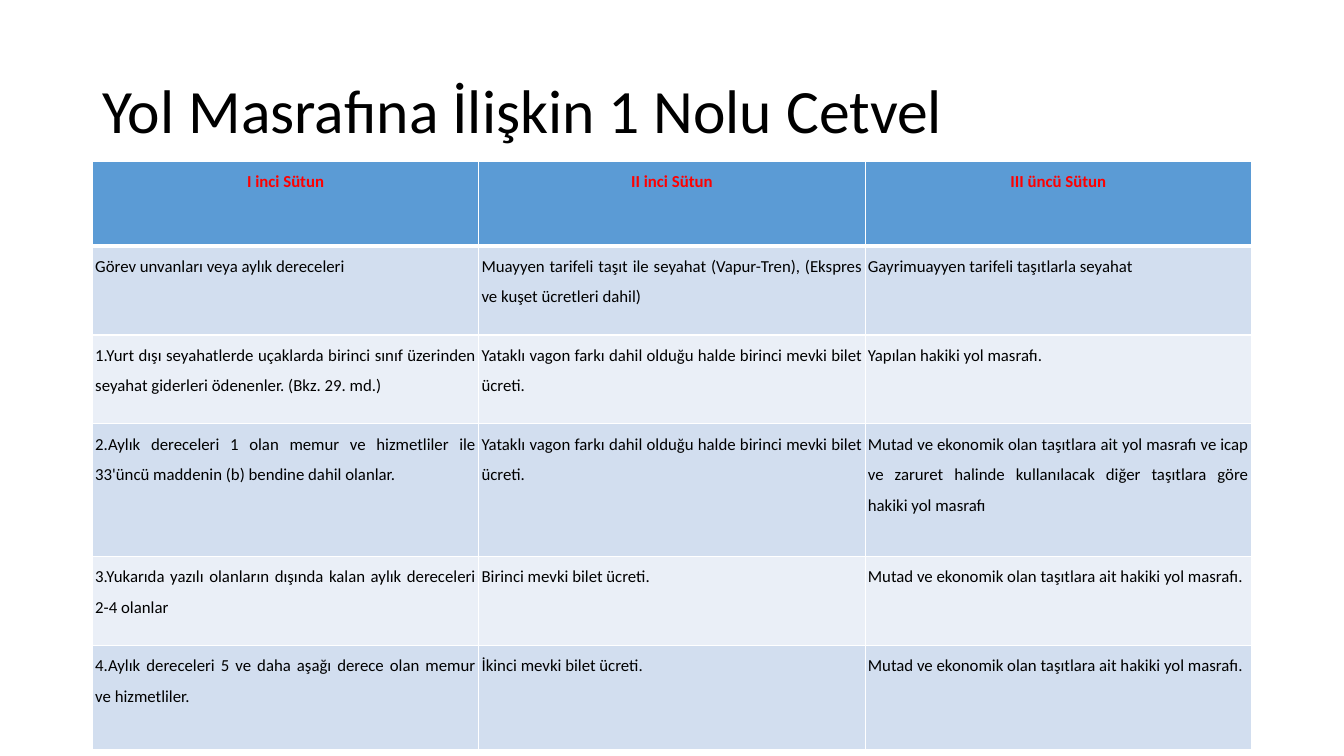
from dataclasses import dataclass

from lxml import etree
from pptx import Presentation
from pptx.dml.color import RGBColor
from pptx.enum.text import MSO_ANCHOR, MSO_AUTO_SIZE, PP_ALIGN
from pptx.oxml.ns import qn
from pptx.util import Cm, Pt

LEFT, CENTER, JUSTIFY = PP_ALIGN.LEFT, PP_ALIGN.CENTER, PP_ALIGN.JUSTIFY
TOP, MIDDLE = MSO_ANCHOR.TOP, MSO_ANCHOR.MIDDLE
NO_AUTOFIT = MSO_AUTO_SIZE.NONE
TITLE_ONLY = 5


@dataclass(frozen=True)
class Theme:
    font: str = "Calibri"
    text: str = "000000"
    heading: str = "FF0000"
    header_fill: str = "5B9BD5"
    bands: tuple = ("D2DEEF", "EAEFF7")
    border: str = "FFFFFF"
    title_size: int = 44
    cell_size: int = 12
    thin: int = 1
    thick: int = 3


@dataclass(frozen=True)
class Box:
    left: float
    top: float
    width: float
    height: float

    def lengths(self):
        return Cm(self.left), Cm(self.top), Cm(self.width), Cm(self.height)


THEME = Theme()
TITLE_BOX = Box(2.33, 1.02, 29.21, 3.68)
SCHEDULE_BOX = Box(2.33, 4.07, 29.21, 14.82)
ROW_HEIGHTS = (2.13, 2.24, 2.24, 3.35, 2.24, 2.62)
CELL_INSET = 0.07

TITLE = "Yol Masrafına İlişkin 1 Nolu Cetvel"
BERTH_FARE = "Yataklı vagon farkı dahil olduğu halde birinci mevki bilet ücreti."
USUAL_COST = "Mutad ve ekonomik olan taşıtlara ait hakiki yol masrafı."
SCHEDULE = (
    ("I inci Sütun", "II inci Sütun", "III üncü Sütun"),
    ("Görev unvanları veya aylık dereceleri",
     "Muayyen tarifeli taşıt ile seyahat (Vapur-Tren), (Ekspres ve kuşet ücretleri dahil) ",
     "Gayrimuayyen tarifeli taşıtlarla seyahat"),
    ("1.Yurt dışı seyahatlerde uçaklarda birinci sınıf üzerinden seyahat giderleri "
     "ödenenler. (Bkz. 29. md.)",
     BERTH_FARE,
     "Yapılan hakiki yol masrafı."),
    ("2.Aylık dereceleri 1 olan memur ve hizmetliler ile 33'üncü maddenin (b) bendine "
     "dahil olanlar.",
     BERTH_FARE,
     "Mutad ve ekonomik olan taşıtlara ait yol masrafı ve icap ve zaruret halinde "
     "kullanılacak diğer taşıtlara göre hakiki yol masrafı"),
    ("3.Yukarıda yazılı olanların dışında kalan aylık dereceleri 2-4 olanlar",
     "Birinci mevki bilet ücreti.",
     USUAL_COST),
    ("4.Aylık dereceleri 5 ve daha aşağı derece olan memur ve hizmetliler.",
     "İkinci mevki bilet ücreti.",
     USUAL_COST),
)


def write_text(frame, text, *, size, color=THEME.text, bold=False, align=LEFT, spacing=1.0):
    frame.word_wrap = True
    paragraph = frame.paragraphs[0]
    paragraph.alignment = align
    paragraph.line_spacing = spacing
    run = paragraph.add_run()
    run.text = text
    run.font.name = THEME.font
    run.font.size = Pt(size)
    run.font.bold = bold
    run.font.color.rgb = RGBColor.from_string(color)


def draw_borders(cell, widths):
    properties = cell._tc.get_or_add_tcPr()
    for side, width in zip(("lnL", "lnR", "lnT", "lnB"), widths):
        line = etree.SubElement(properties, qn(f"a:{side}"), w=str(Pt(width)))
        fill = etree.SubElement(line, qn("a:solidFill"))
        etree.SubElement(fill, qn("a:srgbClr"), val=THEME.border)


def add_title(slide, box):
    title = slide.shapes.title
    title.left, title.top, title.width, title.height = box.lengths()
    frame = title.text_frame
    frame.auto_size = NO_AUTOFIT
    frame.vertical_anchor = MIDDLE
    write_text(frame, TITLE, size=THEME.title_size, spacing=0.9)


def format_cell(cell, text, row_index):
    is_header = row_index == 0
    top_width = THEME.thick if row_index == 1 else THEME.thin
    bottom_width = THEME.thick if is_header else THEME.thin
    draw_borders(cell, (THEME.thin, THEME.thin, top_width, bottom_width))
    band = THEME.bands[(row_index - 1) % len(THEME.bands)]
    cell.fill.solid()
    cell.fill.fore_color.rgb = RGBColor.from_string(THEME.header_fill if is_header else band)
    cell.margin_left = cell.margin_right = Cm(CELL_INSET)
    cell.margin_top = cell.margin_bottom = Cm(0)
    cell.vertical_anchor = TOP
    write_text(
        cell.text_frame, text, size=THEME.cell_size, bold=is_header, spacing=1.5,
        color=THEME.heading if is_header else THEME.text,
        align=CENTER if is_header else JUSTIFY,
    )


def add_schedule(slide, box):
    column_count = len(SCHEDULE[0])
    table = slide.shapes.add_table(len(SCHEDULE), column_count, *box.lengths()).table
    for column in table.columns:
        column.width = Cm(box.width / column_count)
    for row_index, (texts, height) in enumerate(zip(SCHEDULE, ROW_HEIGHTS)):
        table.rows[row_index].height = Cm(height)
        for column_index, text in enumerate(texts):
            format_cell(table.cell(row_index, column_index), text, row_index)


def main():
    presentation = Presentation()
    presentation.slide_width, presentation.slide_height = Cm(33.87), Cm(19.05)
    slide = presentation.slides.add_slide(presentation.slide_layouts[TITLE_ONLY])
    add_title(slide, TITLE_BOX)
    add_schedule(slide, SCHEDULE_BOX)
    presentation.save("out.pptx")


if __name__ == "__main__":
    main()
